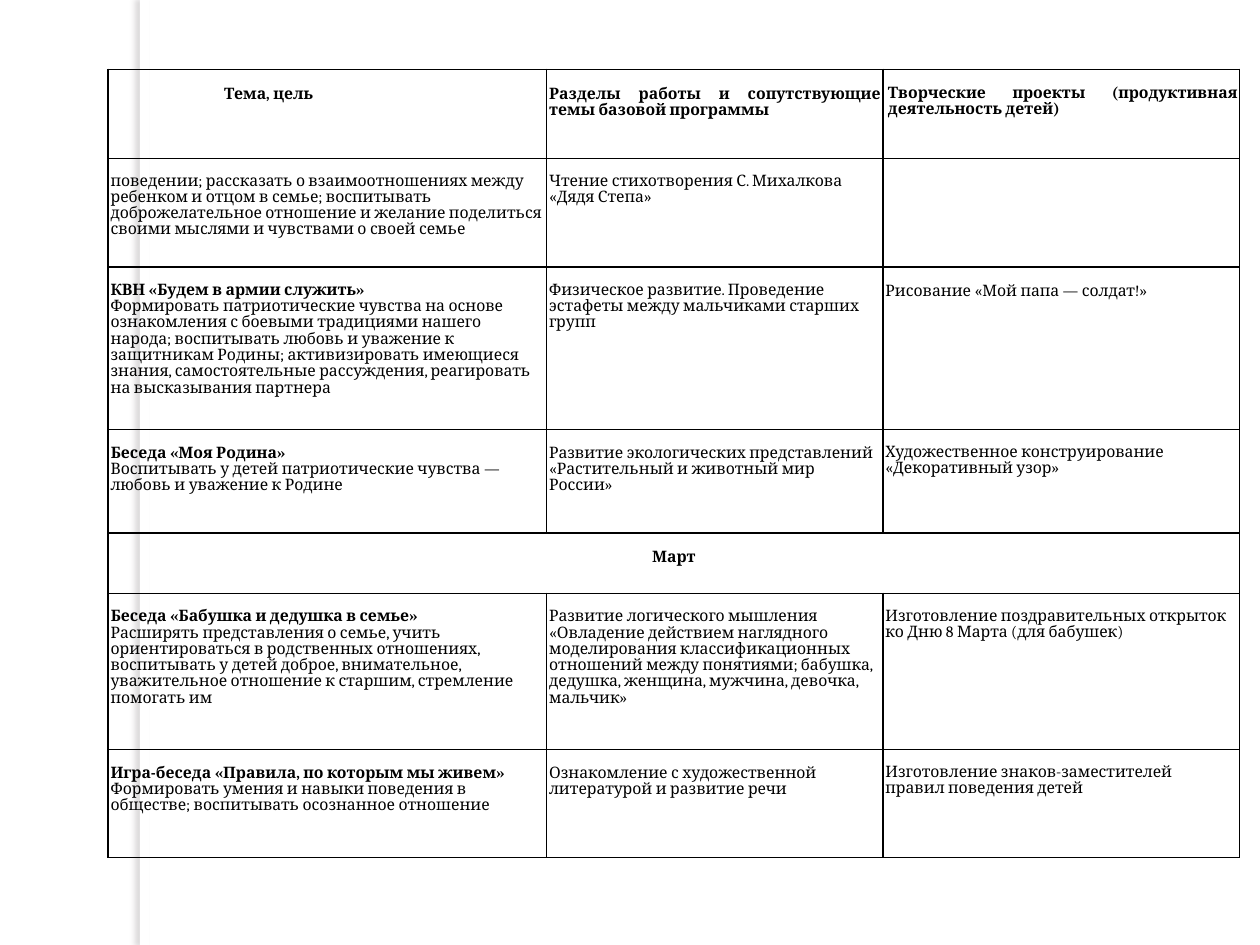
from dataclasses import dataclass, field

from lxml.etree import SubElement
from pptx import Presentation
from pptx.dml.color import RGBColor
from pptx.enum.shapes import MSO_SHAPE
from pptx.enum.text import PP_ALIGN
from pptx.oxml.ns import qn
from pptx.slide import Slide
from pptx.util import Cm, Pt


def color(value):
    return RGBColor.from_string(value)


def add_color(parent, value):
    return SubElement(parent, qn("a:srgbClr"), val=value)


@dataclass
class Entry:
    heading: str = ""
    body: str = ""
    spacing: float = 9.3
    alignment: PP_ALIGN = PP_ALIGN.LEFT
    indent: float = 0


@dataclass
class SlideBuilder:
    slide: Slide
    font: str = "Cambria"
    size: float = 9
    ink: str = "000000"
    paper: str = "FFFFFF"
    shadow: str = "7A7276"
    border: float = 1
    borders: tuple = field(default=("a:lnL", "a:lnR", "a:lnT", "a:lnB"))

    def add_background(self):
        background = self.slide.background.fill
        background.solid()
        background.fore_color.rgb = color(self.paper)

    def add_shaded_strip(self, left, top, width, height):
        shape = self.slide.shapes.add_shape(
            MSO_SHAPE.RECTANGLE, Cm(left), Cm(top), Cm(width), Cm(height))
        shape.fill.solid()
        shape.fill.fore_color.rgb = color(self.paper)
        shape.line.fill.background()
        shape.shadow.inherit = False
        effects = shape.element.spPr.find(qn("a:effectLst"))
        outer = SubElement(effects, qn("a:outerShdw"), blurRad=str(Pt(3)),
                           dist=str(Pt(3)), dir="10800000", rotWithShape="0")
        SubElement(add_color(outer, self.shadow), qn("a:alpha"), val="25000")

    def add_text(self, paragraph, text, bold, entry):
        paragraph.alignment = entry.alignment
        paragraph.line_spacing = Pt(entry.spacing)
        if entry.indent:
            paragraph._p.get_or_add_pPr().set("marL", str(Cm(entry.indent)))
        for number, line in enumerate(text.split("\n")):
            if number:
                paragraph.add_line_break()
            run = paragraph.add_run()
            run.text = line
            run.font.name = self.font
            run.font.size = Pt(self.size)
            run.font.bold = bold
            run.font.color.rgb = color(self.ink)

    def style_cell(self, cell):
        properties = cell._tc.get_or_add_tcPr()
        for side in self.borders:
            line = SubElement(properties, qn(side), w=str(Pt(self.border)))
            add_color(SubElement(line, qn("a:solidFill")), self.ink)
        cell.fill.background()
        cell.margin_left = cell.margin_right = Cm(0.05)
        cell.margin_top = cell.margin_bottom = 0

    def fill_cell(self, cell, entry):
        parts = [(text, bold) for text, bold in
                 ((entry.heading, True), (entry.body, False)) if text]
        if not parts:
            return
        cell.margin_top = Pt(entry.spacing)
        frame = cell.text_frame
        for number, (text, bold) in enumerate(parts):
            paragraph = frame.add_paragraph() if number else frame.paragraphs[0]
            self.add_text(paragraph, text, bold, entry)

    def add_table(self, left, top, widths, heights, rows):
        table_frame = self.slide.shapes.add_table(
            len(rows), len(widths), Cm(left), Cm(top),
            Cm(sum(widths)), Cm(sum(heights)))
        table = table_frame.table
        table.first_row = table.horz_banding = False
        for column, width in zip(table.columns, widths):
            column.width = Cm(width)
        for row, height, entries in zip(table.rows, heights, rows):
            row.height = Cm(height)
            for cell in row.cells:
                self.style_cell(cell)
            if len(entries) == 1:
                row.cells[0].merge(row.cells[len(widths) - 1])
            for cell, entry in zip(row.cells, entries):
                self.fill_cell(cell, entry)


JUSTIFY = PP_ALIGN.JUSTIFY
COLUMN_WIDTHS = [8.84, 6.78, 7.19]
ROW_HEIGHTS = [1.8, 2.18, 3.28, 2.08, 1.22, 3.15, 2.18]
PLAN = [
    [
        Entry("Тема, цель", "", 9.6, JUSTIFY, 2.29),
        Entry("Разделы работы и сопутствующие темы базовой программы",
              "", 9.6, JUSTIFY),
        Entry("Творческие проекты (продуктивная деятельность детей)",
              "", 9.3, JUSTIFY, 0.05),
    ],
    [
        Entry("", "поведении; рассказать о взаимоотношениях между ребенком и "
              "отцом в семье; воспитывать доброжелательное отношение и желание "
              "поделиться своими мыслями и чувствами о своей семье", 9.1),
        Entry("", "Чтение стихотворения С. Михалкова «Дядя Степа»", 9.1),
        Entry(),
    ],
    [
        Entry("КВН «Будем в армии служить»",
              "Формировать патриотические чувства на основе ознакомления с "
              "боевыми традициями нашего народа; воспитывать любовь и уважение "
              "к защитникам Родины; активизировать имеющиеся знания, "
              "самостоятельные рассуждения, реагировать на высказывания партнера"),
        Entry("", "Физическое развитие. Проведение эстафеты между мальчиками "
              "старших групп"),
        Entry("", "Рисование «Мой папа — солдат!»", 9.6),
    ],
    [
        Entry("Беседа «Моя Родина»",
              "Воспитывать у детей патриотические чувства — любовь и уважение "
              "к Родине"),
        Entry("", "Развитие экологических представлений «Растительный и "
              "животный мир России»"),
        Entry("", "Художественное конструирование «Декоративный узор»", 9.1),
    ],
    [Entry("Март", "", 9.6, PP_ALIGN.CENTER)],
    [
        Entry("Беседа «Бабушка и дедушка в семье»",
              "Расширять представления о семье, учить ориентироваться в "
              "родственных отношениях, воспитывать у детей доброе, "
              "внимательное, уважительное отношение к старшим, стремление "
              "помогать им"),
        Entry("", "Развитие логического мышления «Овладение действием "
              "наглядного моделирования классификационных отношений между "
              "понятиями; бабушка, дедушка, женщина, мужчина, девочка, мальчик»"),
        Entry("", "Изготовление поздравительных открыток ко Дню 8 Марта "
              "(для бабушек)", 9.1),
    ],
    [
        Entry("Игра-беседа «Правила, по которым мы живем»",
              "Формировать умения и навыки поведения в обществе; воспитывать "
              "осознанное отношение"),
        Entry("", "Ознакомление с художественной литературой и развитие речи"),
        Entry("", "Изготовление знаков-заместителей\nправил поведения детей", 9.1),
    ],
]


def main():
    presentation = Presentation()
    presentation.slide_width = Cm(25.4)
    presentation.slide_height = Cm(19.05)
    builder = SlideBuilder(
        presentation.slides.add_slide(presentation.slide_layouts[6]))
    builder.add_background()
    builder.add_shaded_strip(2.82, 0, 0.2, 19.05)
    builder.add_table(2.18, 1.4, COLUMN_WIDTHS, ROW_HEIGHTS, PLAN)
    presentation.save("out.pptx")


if __name__ == "__main__":
    main()
